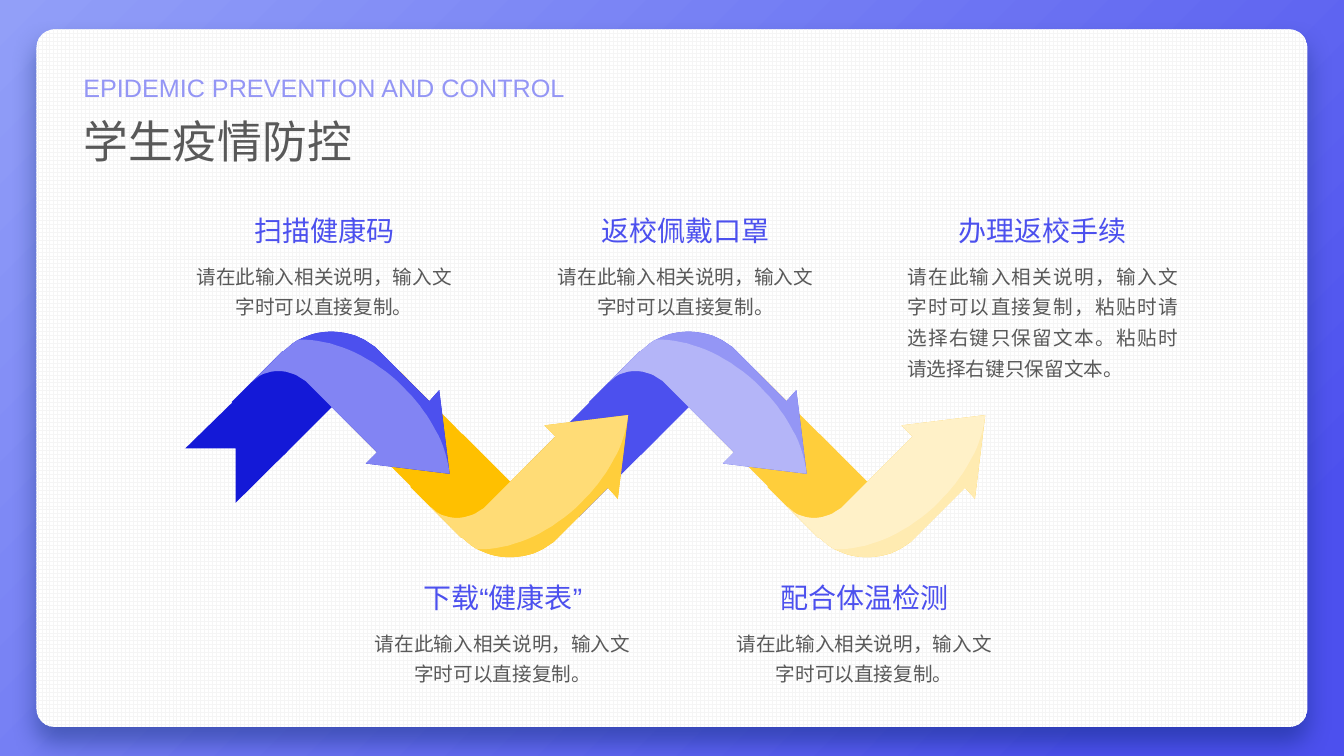
from lxml import etree
from pptx import Presentation, util as u
from pptx.dml.color import RGBColor
from pptx.enum import dml, lang, shapes, text
from pptx.oxml import ns

COLORS = {
    "sky": "929FF8", "indigo": "4C50EE", "navy": "1419D7", "lavender": "9496F5",
    "amber": "FFC000", "gold": "FFCE3B", "cream": "FFEBB1", "white": "FFFFFF",
    "grid": "F5F5F5", "gray": "595959", "shadow": "002060",
}
RGB = {name: RGBColor.from_string(value) for name, value in COLORS.items()}
ALIGN = text.PP_ALIGN

presentation = Presentation()
presentation.slide_width, presentation.slide_height = u.Cm(33.87), u.Cm(19.05)
slide = presentation.slides.add_slide(presentation.slide_layouts[6])


def add_text(content, left, top, width, height, size, color, align=ALIGN.LEFT, spacing=1.0):
    box = slide.shapes.add_textbox(u.Cm(left), u.Cm(top), u.Cm(width), u.Cm(height))
    box.text_frame.word_wrap = True
    paragraph = box.text_frame.paragraphs[0]
    paragraph.alignment, paragraph.line_spacing = align, spacing
    run = paragraph.add_run()
    run.text = content
    settings = {"size": u.Pt(size), "name": "Arial",
                "language_id": lang.MSO_LANGUAGE_ID.SIMPLIFIED_CHINESE}
    for name, value in settings.items():
        setattr(run.font, name, value)
    run.font.color.rgb = RGB[color]
    etree.SubElement(run.font._element, ns.qn("a:ea"), typeface="Arial")


def curve(start, control_1, control_2, end, steps=16):
    """Points along a cubic Bezier curve, both ends included."""
    points = []
    for step in range(steps + 1):
        t = step / steps
        weights = ((1 - t) ** 3, 3 * t * (1 - t) ** 2, 3 * t ** 2 * (1 - t), t ** 3)
        corners = (start, control_1, control_2, end)
        points.append(tuple(sum(w * p[axis] for w, p in zip(weights, corners))
                            for axis in (0, 1)))
    return points


# Background and card
background = slide.background.fill
background.gradient()
background.gradient_angle = 315
for stop, color, position in zip(background.gradient_stops, ("sky", "indigo"), (0, 0.88)):
    stop.color.rgb, stop.position = RGB[color], position

card = slide.shapes.add_shape(shapes.MSO_SHAPE.ROUNDED_RECTANGLE,
                              u.Cm(0.92), u.Cm(0.74), u.Cm(32.03), u.Cm(17.58))
card.adjustments[0] = 0.026
card.line.fill.background()
card.fill.patterned()
card.fill.pattern = dml.MSO_PATTERN.LARGE_GRID
card.fill.fore_color.rgb, card.fill.back_color.rgb = RGB["grid"], RGB["white"]
card.shadow.inherit = False
effects = card._element.spPr.find(ns.qn("a:effectLst"))
shadow = etree.SubElement(effects, ns.qn("a:outerShdw"), blurRad=str(u.Pt(17)),
                          dist=str(u.Pt(11)), dir="5400000", algn="t", rotWithShape="0")
shadow_color = etree.SubElement(shadow, ns.qn("a:srgbClr"), val=COLORS["shadow"])
etree.SubElement(shadow_color, ns.qn("a:alpha"), val="40000")

# Headings
add_text("学生疫情防控", 1.85, 2.74, 10.82, 1.63, 32, "gray")
add_text("EPIDEMIC PREVENTION AND CONTROL", 1.85, 1.7, 16.26, 1.02, 18, "lavender")

# Outline parts of the first arrow, in cm
shoulder = [(7.11, 8.86), (7.16, 8.84)]
arch = shoulder + curve((7.37, 8.66), (8, 8.23), (8.84, 8.26), (9.45, 8.74))
arch += [(9.55, 8.84), (10.82, 10.11), (11.07, 9.83)]
head = [(11.33, 11.94), (9.22, 11.68), (9.5, 11.4), (8.36, 10.26)]
underside = [(7.7, 9.6)] + curve((7.54, 9.5), (7.21, 9.3), (6.81, 9.3), (6.5, 9.5))
underside += [(6.35, 9.63)]
gloss = [(7.37, 8.66), (7.52, 8.56)]
gloss += curve((7.7, 8.56), (8.48, 8.59), (9.4, 8.99), (10.16, 9.75))
gloss += curve((10.16, 9.75), (10.77, 10.36), (11.18, 11.07), (11.3, 11.73))
flag = [(5.92, 10.08), (7.24, 11.38), (5.94, 12.67), (5.94, 11.3), (4.67, 11.3)]
strip = [(4.27, 11.73), (6.27, 9.73), (7.59, 11.02), (5.59, 13.03)]

# Every arrow is one step to the right of the last and upside down
STEP, MIRROR = 4.5, 22.4
arrow_colors = [("navy", "indigo"), ("amber", "gold"), ("indigo", "lavender"), ("gold", "cream")]
for index, (dark, light) in reversed(list(enumerate(arrow_colors))):
    layers = [
        (strip if index else flag, dark),
        (arch + head + [(7.16, 11.46), (5.84, 10.13)], dark),
        (arch + head + underside, light),
        (head + underside + shoulder + gloss, "white"),
    ]
    for outline, color in layers:
        points = [(100 * (x + index * STEP), 100 * (MIRROR - y if index % 2 else y))
                  for x, y in outline]
        builder = slide.shapes.build_freeform(*points[0], scale=u.Cm(0.01))
        builder.add_line_segments(points[1:], close=True)
        shape = builder.convert_to_shape()
        shape.shadow.inherit = False
        shape.line.fill.background()
        shape.fill.solid()
        shape.fill.fore_color.rgb = RGB[color]
        if color == "white":
            tint = shape._element.spPr.find(ns.qn("a:solidFill"))[0]
            etree.SubElement(tint, ns.qn("a:alpha"), val="30000")

# Captions
UPPER, LOWER = 5.26, 14.5
SHORT = "请在此输入相关说明，输入文字时可以直接复制。"
LONG = "请在此输入相关说明，输入文字时可以直接复制，粘贴时请选择右键只保留文本。粘贴时请选择右键只保留文本。"
captions = [
    ("扫描健康码", SHORT, 4.5, UPPER, 1.73, ALIGN.CENTER),
    ("下载“健康表”", SHORT, 9, LOWER, 1.73, ALIGN.CENTER),
    ("返校佩戴口罩", SHORT, 13.61, UPPER, 1.73, ALIGN.CENTER),
    ("配合体温检测", SHORT, 18.11, LOWER, 1.73, ALIGN.CENTER),
    ("办理返校手续", LONG, 22.61, UPPER, 3.3, ALIGN.JUSTIFY),
]
for title, body, left, top, height, align in captions:
    add_text(body, left, top + 1.11, 7.34, height, 14, "gray", align, 1.3)
    add_text(title, left + 0.27, top, 6.8, 1.11, 20, "indigo", ALIGN.CENTER)

presentation.save("out.pptx")
